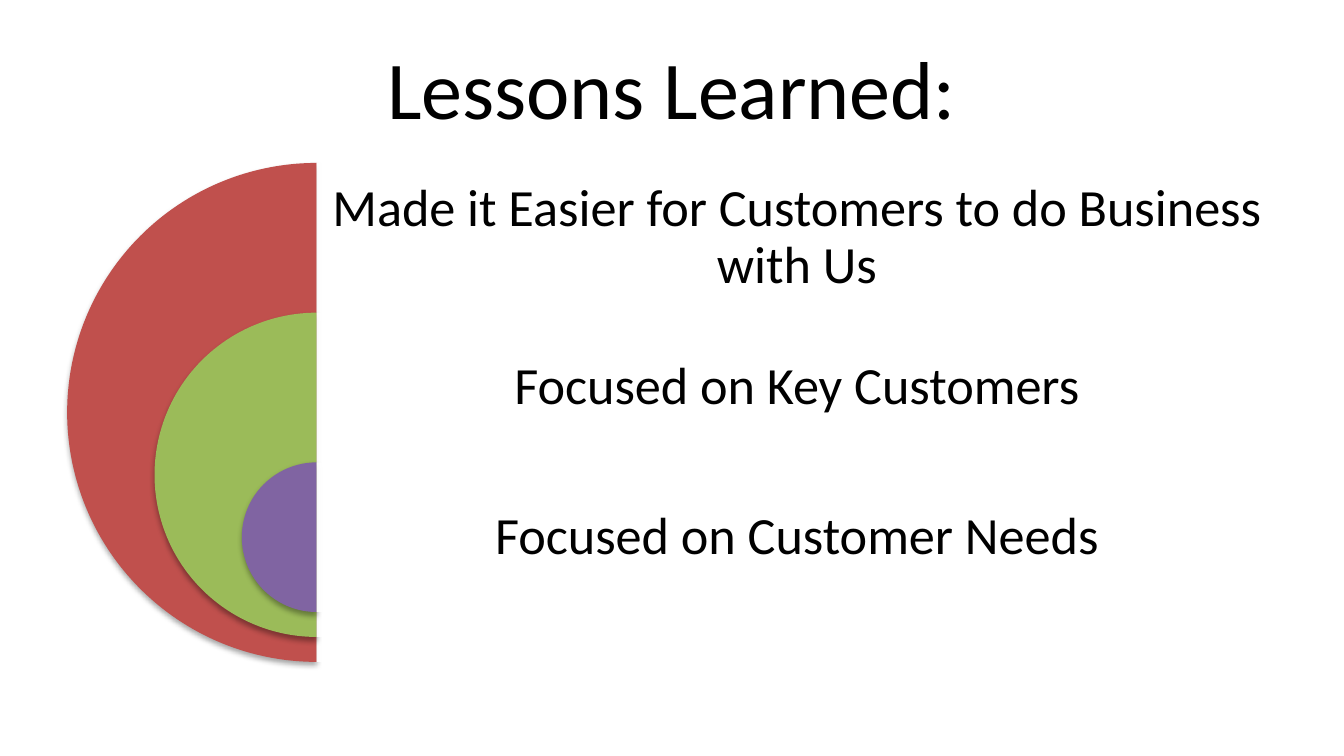
"""Build the Lessons Learned slide with nested half circles."""
from lxml import etree
from pptx import Presentation
from pptx.dml.color import RGBColor
from pptx.enum.shapes import MSO_SHAPE
from pptx.enum.text import MSO_ANCHOR, PP_ALIGN
from pptx.oxml.ns import qn
from pptx.util import Inches, Pt

PIE = MSO_SHAPE.PIE
RECTANGLE = MSO_SHAPE.RECTANGLE
TOP = MSO_ANCHOR.TOP
MIDDLE = MSO_ANCHOR.MIDDLE
CENTER = PP_ALIGN.CENTER

BLACK = RGBColor(0x00, 0x00, 0x00)
WHITE = RGBColor(0xFF, 0xFF, 0xFF)
RED = RGBColor(0xC0, 0x50, 0x4D)
GREEN = RGBColor(0x9B, 0xBB, 0x59)
PURPLE = RGBColor(0x80, 0x64, 0xA2)

LESSONS = [
    ("Made it Easier for Customers to do Business with Us", RED),
    ("Focused on Key Customers", GREEN),
    ("Focused on Customer Needs", PURPLE),
]
SLIDE_WIDTH = 10
SLIDE_HEIGHT = SLIDE_WIDTH * 9 / 16
SIDE_MARGIN = 0.5
BOTTOM_MARGIN = 0.7
OUTER_DIAMETER = 0.66 * SLIDE_HEIGHT
ROW_HEIGHT = 0.3 * OUTER_DIAMETER
DIAMETER_STEP = 0.35 * OUTER_DIAMETER
FIRST_TOP = SLIDE_HEIGHT - BOTTOM_MARGIN - OUTER_DIAMETER
CENTER_LINE = SIDE_MARGIN + OUTER_DIAMETER / 2
PANEL_WIDTH = SLIDE_WIDTH - SIDE_MARGIN - CENTER_LINE

FRAME_FORMAT = {
    "word_wrap": True,
    "vertical_anchor": MIDDLE,
    "margin_left": Inches(0.11),
    "margin_right": Inches(0.11),
    "margin_top": Inches(0.12),
    "margin_bottom": Inches(0.12),
}


def set_attributes(target, values):
    """Set each named attribute on the target."""
    for name, value in values.items():
        setattr(target, name, value)


def write_text(text_frame, text, size, line_spacing):
    """Write one centred black paragraph."""
    paragraph = text_frame.paragraphs[0]
    set_attributes(paragraph, {"alignment": CENTER, "line_spacing": line_spacing})
    run = paragraph.add_run()
    run.text = text
    set_attributes(run.font, {"name": "Calibri", "size": Pt(size)})
    run.font.color.rgb = BLACK


def add_title(slide, text):
    """Place and fill the title placeholder."""
    title = slide.shapes.title
    set_attributes(title, {"left": Inches(SIDE_MARGIN), "top": Inches(0.23),
                           "width": Inches(9), "height": Inches(0.94)})
    title.text_frame.vertical_anchor = TOP
    write_text(title.text_frame, text, 44, 1.0)


def add_filled_shape(group, kind, left, top, width, height, color):
    """Add a borderless shape with a solid fill and no shadow."""
    shape = group.shapes.add_shape(
        kind, Inches(left), Inches(top), Inches(width), Inches(height))
    shape.shadow.inherit = False
    shape.fill.solid()
    shape.fill.fore_color.rgb = color
    shape.line.fill.background()
    return shape


def add_shadow(shape):
    """Give the shape a soft shadow straight below it."""
    effects = shape.element.spPr.find(qn("a:effectLst"))
    shadow = etree.SubElement(
        effects, qn("a:outerShdw"), blurRad=str(Pt(3.1)), dist=str(Pt(1.8)),
        dir="5400000", rotWithShape="0")
    color = etree.SubElement(shadow, qn("a:srgbClr"), val=str(BLACK))
    etree.SubElement(color, qn("a:alpha"), val="35000")


def add_half_circle(group, top, diameter, color):
    """Add the left half of a circle centred on the panel edge."""
    shape = add_filled_shape(
        group, PIE, CENTER_LINE - diameter / 2, top, diameter, diameter, color)
    shape.adjustments[0] = 54
    shape.adjustments[1] = 162
    add_shadow(shape)


def add_panel(group, top, height):
    """Add a nearly opaque white panel beside a half circle."""
    shape = add_filled_shape(
        group, RECTANGLE, CENTER_LINE, top, PANEL_WIDTH, height, WHITE)
    color = shape.element.spPr.find(qn("a:solidFill"))[0]
    etree.SubElement(color, qn("a:alpha"), val="90000")


def add_label(group, top, text):
    """Add the text of one lesson."""
    box = group.shapes.add_textbox(
        Inches(CENTER_LINE), Inches(top), Inches(PANEL_WIDTH), Inches(ROW_HEIGHT))
    set_attributes(box.text_frame, FRAME_FORMAT)
    write_text(box.text_frame, text, 28, 0.9)


def main():
    """Build and save the presentation."""
    presentation = Presentation()
    set_attributes(presentation, {"slide_width": Inches(SLIDE_WIDTH),
                                  "slide_height": Inches(SLIDE_HEIGHT)})
    slide = presentation.slides.add_slide(presentation.slide_layouts[5])
    add_title(slide, "Lessons Learned:")
    group = slide.shapes.add_group_shape()
    for index, (text, color) in enumerate(LESSONS):
        top = FIRST_TOP + index * ROW_HEIGHT
        diameter = OUTER_DIAMETER - index * DIAMETER_STEP
        add_half_circle(group, top, diameter, color)
        add_panel(group, top, diameter)
        add_label(group, top, text)
    presentation.save("out.pptx")


if __name__ == "__main__":
    main()
